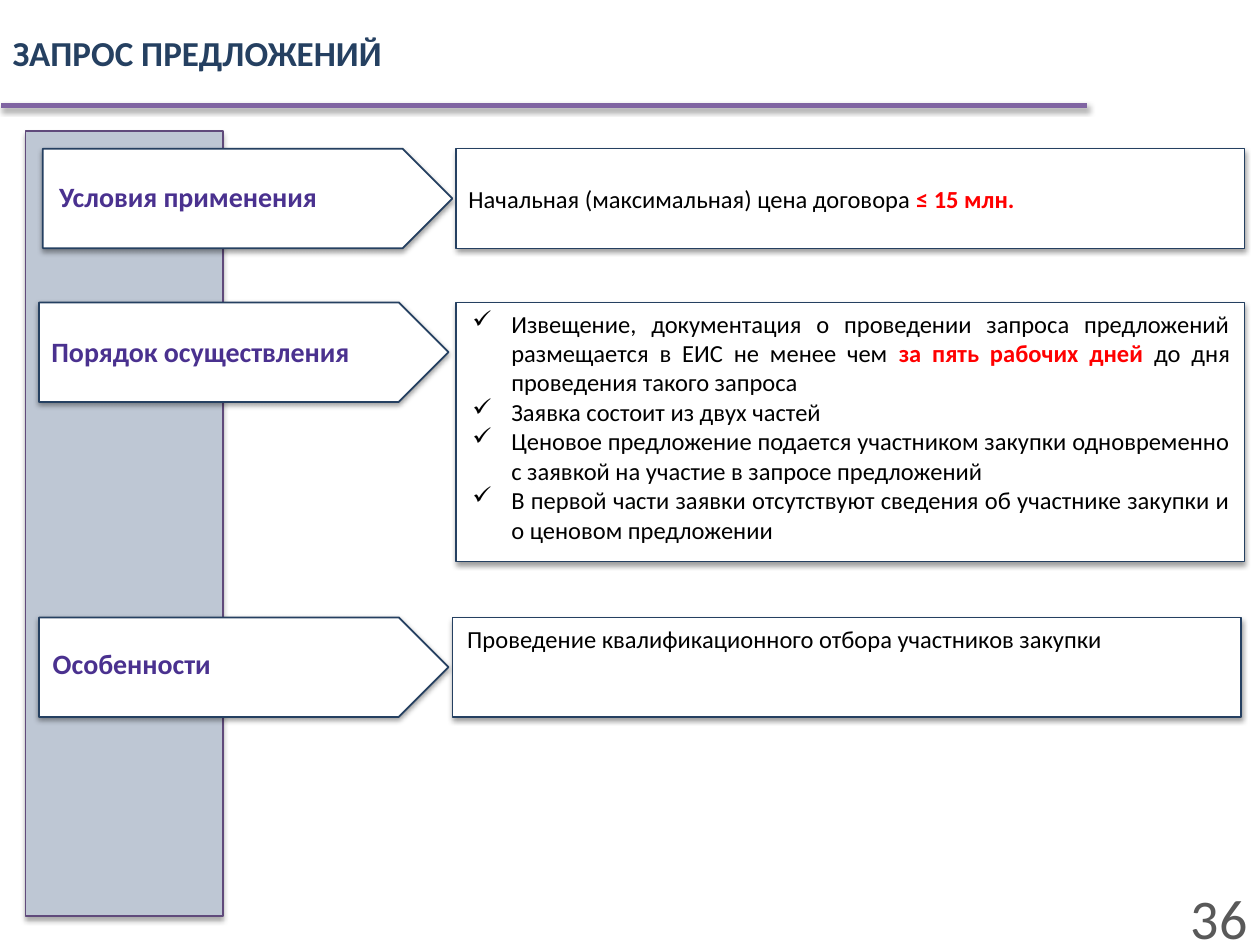
"""Builds the slide on the request for proposals procedure."""
from lxml import etree
from pptx import Presentation
from pptx.dml.color import RGBColor
from pptx.enum import shapes, text
from pptx.oxml import ns
from pptx.util import Inches, Pt

NAVY = RGBColor(0x25, 0x40, 0x61)
VIOLET = RGBColor(0x4A, 0x31, 0x8F)
PURPLE = RGBColor(0x80, 0x64, 0xA2)
PLUM = RGBColor(0x60, 0x4A, 0x7B)
BAND = RGBColor(0xBE, 0xC7, 0xD4)
GREY = RGBColor(0x59, 0x59, 0x59)
RED = RGBColor(0xFF, 0x00, 0x00)
BLACK = RGBColor(0x00, 0x00, 0x00)
WHITE = RGBColor(0xFF, 0xFF, 0xFF)

RECTANGLE = shapes.MSO_SHAPE.RECTANGLE
PENTAGON = shapes.MSO_SHAPE.PENTAGON
JUSTIFY = text.PP_ALIGN.JUSTIFY
MIDDLE = text.MSO_ANCHOR.MIDDLE

CONDITION = [("Начальная (максимальная) цена договора ", False), ("≤ 15 млн. ", True)]
STEPS = [
    [
        ("Извещение, документация о проведении запроса предложений "
         "размещается в ЕИС не менее чем ", False),
        ("за пять рабочих дней ", True),
        ("до дня проведения такого запроса", False),
    ],
    [("Заявка состоит из двух частей", False)],
    [("Ценовое предложение подается участником закупки одновременно "
      "с заявкой на участие в запросе предложений", False)],
    [("В первой части заявки отсутствуют сведения об участнике закупки "
      "и о ценовом предложении", False)],
]
FEATURE = [("Проведение квалификационного отбора участников закупки", False)]


def add_element(parent, tag, **attributes):
    """Append a DrawingML element and return it."""
    return etree.SubElement(parent, ns.qn(tag), attributes)


def add_shadow(shape, opacity, distance):
    """Give a shape or connector a soft shadow straight below it."""
    properties = shape._element.spPr
    effects = properties.find(ns.qn("a:effectLst"))
    if effects is None:
        effects = add_element(properties, "a:effectLst")
    shadow = add_element(
        effects, "a:outerShdw", blurRad=str(Pt(3.1)), dist=str(Pt(distance)),
        dir="5400000", rotWithShape="0")
    color = add_element(shadow, "a:srgbClr", val="000000")
    add_element(color, "a:alpha", val=str(opacity * 1000))


def add_panel(slide, kind, left, top, width, height, fill=WHITE, line=NAVY,
              line_width=0.75, opacity=38, distance=1.6):
    """Add a filled, outlined shape with a shadow."""
    shape = slide.shapes.add_shape(
        kind, Inches(left), Inches(top), Inches(width), Inches(height))
    shape.fill.solid()
    shape.fill.fore_color.rgb = fill
    shape.line.color.rgb = line
    shape.line.width = Pt(line_width)
    shape.shadow.inherit = False
    add_shadow(shape, opacity, distance)
    return shape


def format_paragraph(paragraph, size, color=None, bold=None, alignment=None):
    """Set the font and alignment of a paragraph."""
    paragraph.font.name = "Calibri"
    paragraph.font.size = Pt(size)
    paragraph.font.bold = bold
    if color is not None:
        paragraph.font.color.rgb = color
    paragraph.alignment = alignment


def add_text(slide, left, top, width, height):
    """Add a wrapping text box and return its text frame."""
    box = slide.shapes.add_textbox(
        Inches(left), Inches(top), Inches(width), Inches(height))
    box.text_frame.word_wrap = True
    return box.text_frame


def fill_body(frame, paragraphs, bulleted=False):
    """Write justified paragraphs whose key phrases are bold and red."""
    for index, parts in enumerate(paragraphs):
        paragraph = frame.add_paragraph() if index else frame.paragraphs[0]
        format_paragraph(paragraph, 14, alignment=JUSTIFY)
        for words, emphasized in parts:
            run = paragraph.add_run()
            run.text = words
            run.font.bold = emphasized
            run.font.color.rgb = RED if emphasized else BLACK
        if bulleted:
            properties = paragraph._p.get_or_add_pPr()
            indent = Inches(0.31)
            properties.set("marL", str(indent))
            properties.set("indent", str(-indent))
            bullet = etree.Element(ns.qn("a:buChar"), {"char": "✓"})
            properties.insert(0, bullet)


def add_label(slide, words, arrow_left, arrow_top, text_left, text_top):
    """Add a pentagon arrow with its row heading."""
    add_panel(slide, PENTAGON, arrow_left, arrow_top, 3.25, 0.79, line_width=1)
    frame = add_text(slide, text_left, text_top, 2.95, 0.37)
    frame.text = words
    format_paragraph(frame.paragraphs[0], 16, VIOLET, True)


def add_title(slide):
    """Place the title and the rule below it."""
    title = slide.shapes.title
    title.left, title.top = Inches(0), Inches(0)
    title.width, title.height = Inches(8.63), Inches(0.83)
    title.text_frame.text = "ЗАПРОС ПРЕДЛОЖЕНИЙ"
    title.text_frame.vertical_anchor = MIDDLE
    format_paragraph(title.text_frame.paragraphs[0], 20, NAVY, True, text.PP_ALIGN.LEFT)
    rule = slide.shapes.add_connector(
        shapes.MSO_CONNECTOR.STRAIGHT,
        Inches(0.01), Inches(0.84), Inches(8.63), Inches(0.84))
    rule.line.color.rgb = PURPLE
    rule.line.width = Pt(3)
    add_shadow(rule, 35, 1.8)


def add_page_number(slide):
    """Add the page number in the bottom right corner."""
    frame = add_text(slide, 9.34, 7.05, 0.66, 0.45)
    frame.text = "36"
    frame.vertical_anchor = MIDDLE
    format_paragraph(frame.paragraphs[0], 32, GREY, alignment=text.PP_ALIGN.RIGHT)


def main():
    """Build and save the presentation."""
    presentation = Presentation()
    presentation.slide_width, presentation.slide_height = Inches(10), Inches(7.5)
    slide = presentation.slides.add_slide(presentation.slide_layouts[5])

    add_panel(slide, RECTANGLE, 0.2, 1.04, 1.57, 6.23, BAND, PLUM,
              opacity=35, distance=1.8)
    add_page_number(slide)
    add_title(slide)

    add_label(slide, "Условия применения", 0.34, 1.18, 0.37, 1.38)
    condition = add_panel(slide, RECTANGLE, 3.62, 1.18, 6.26, 0.79)
    condition.text_frame.vertical_anchor = MIDDLE
    fill_body(condition.text_frame, [CONDITION])

    add_label(slide, "Порядок осуществления", 0.31, 2.4, 0.31, 2.61)
    add_panel(slide, RECTANGLE, 3.62, 2.4, 6.26, 2.06)
    fill_body(add_text(slide, 3.65, 2.4, 6.21, 1.99), STEPS, bulleted=True)

    add_label(slide, "Особенности", 0.31, 4.9, 0.32, 5.08)
    add_panel(slide, RECTANGLE, 3.59, 4.9, 6.26, 0.79)
    fill_body(add_text(slide, 3.61, 4.9, 6.21, 0.34), [FEATURE])

    presentation.save("out.pptx")


if __name__ == "__main__":
    main()
